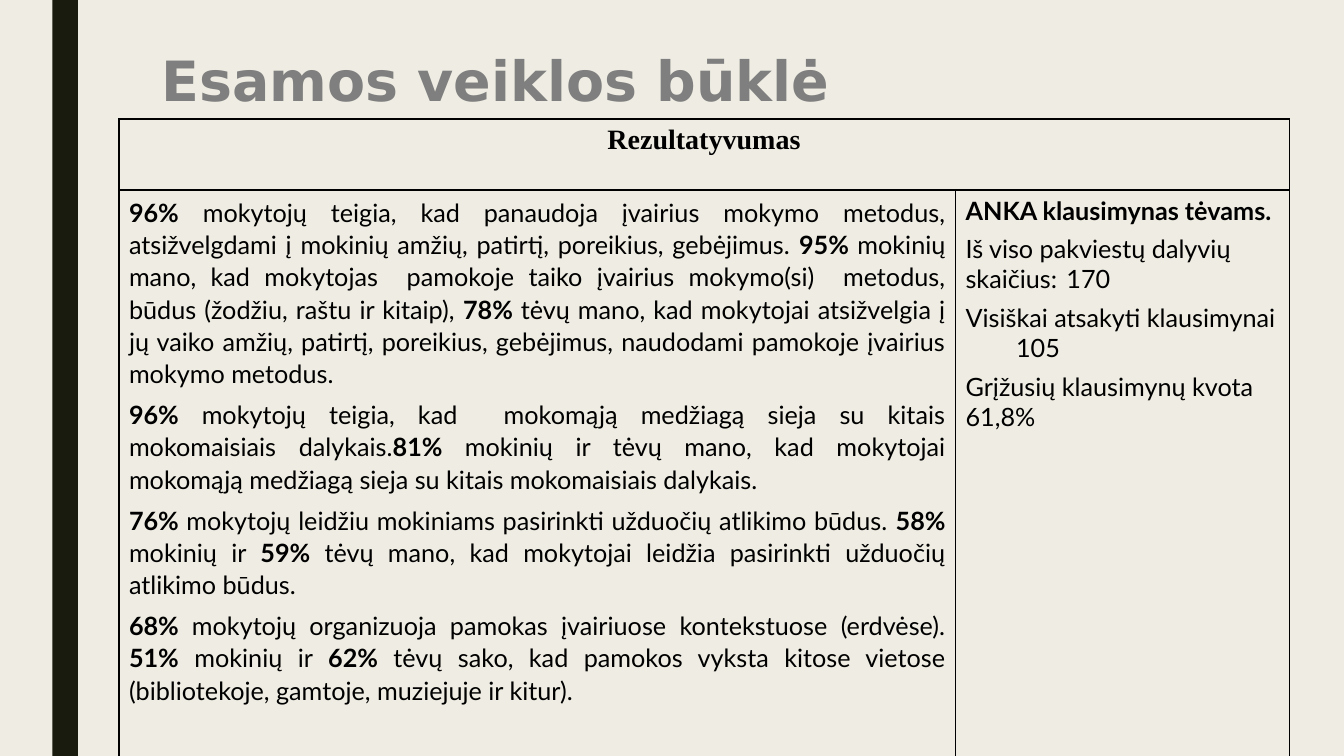
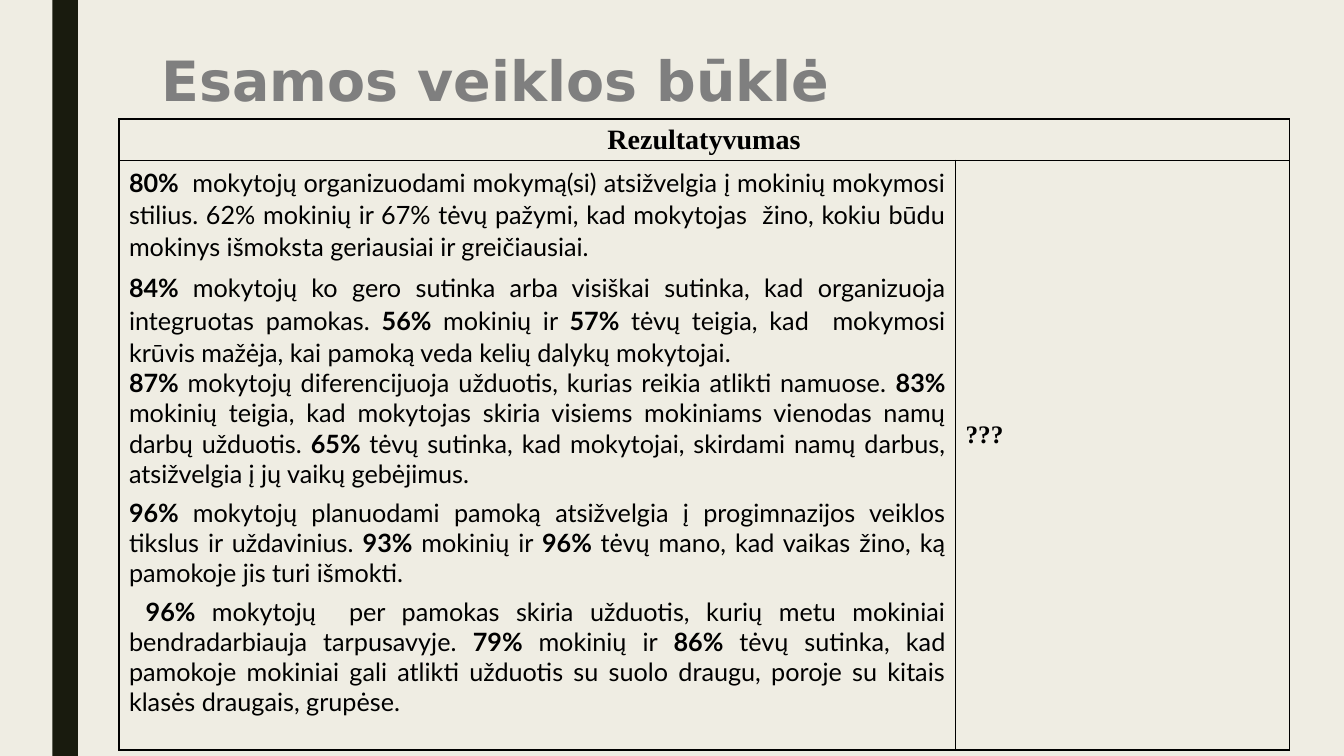
from lxml import etree
from pptx import Presentation
from pptx.dml.color import RGBColor
from pptx.enum.shapes import MSO_SHAPE
from pptx.enum.text import MSO_ANCHOR, PP_ALIGN
from pptx.oxml.ns import qn
from pptx.util import Inches, Pt

CREAM = RGBColor(0xEF, 0xED, 0xE3)
DARK = RGBColor(0x19, 0x1B, 0x0E)
GREY = RGBColor(0x7F, 0x7F, 0x7F)
BLACK = RGBColor(0, 0, 0)

RECT = MSO_SHAPE.RECTANGLE
TOP, MIDDLE = MSO_ANCHOR.TOP, MSO_ANCHOR.MIDDLE
LEFT, CENTER, JUSTIFY = PP_ALIGN.LEFT, PP_ALIGN.CENTER, PP_ALIGN.JUSTIFY

TITLE_FONT = {"name": "DejaVu Sans", "size": Pt(39.6), "bold": True}
HEAD_FONT = {"name": "Times New Roman", "size": Pt(20)}
BODY_FONT = {"name": "Lato", "size": Pt(18)}
MARK_FONT = {"name": "Times New Roman", "size": Pt(18)}

HEAD = {"alignment": CENTER}
SIDE = {"alignment": LEFT, "space_before": Pt(6)}
TIGHT = {"alignment": JUSTIFY}
BODY = {"alignment": JUSTIFY, "space_before": Pt(6)}
LOOSE = {**BODY, "line_spacing": 1.07}
FIRST = {**TIGHT, "line_spacing": 1.07}

COLUMNS = (62.25, 24.83)
TITLE = "Esamos veiklos būklė"
HEADING = [("**Rezultatyvumas**", HEAD)]

METHODS = [
    ("**96%** mokytojų teigia, kad panaudoja įvairius mokymo metodus, "
     "atsižvelgdami į mokinių amžių, patirtį, poreikius, gebėjimus. "
     "**95% **mokinių mano, kad mokytojas  pamokoje taiko įvairius "
     "mokymo(si)  metodus, būdus (žodžiu, raštu ir kitaip), **78% **tėvų "
     "mano, kad mokytojai atsižvelgia į jų vaiko amžių, patirtį, poreikius, "
     "gebėjimus, naudodami pamokoje įvairius mokymo metodus.", FIRST),
    ("**96% **mokytojų teigia, kad  mokomąją medžiagą sieja su kitais "
     "mokomaisiais dalykais.**81% **mokinių ir tėvų mano, kad mokytojai "
     "mokomąją medžiagą sieja su kitais mokomaisiais dalykais.", LOOSE),
    ("**76% **mokytojų leidžiu mokiniams pasirinkti užduočių atlikimo būdus. "
     "**58% **mokinių ir **59%** tėvų mano, kad mokytojai leidžia pasirinkti "
     "užduočių atlikimo būdus.", LOOSE),
    ("**68% **mokytojų organizuoja pamokas įvairiuose kontekstuose "
     "(erdvėse). **51%** mokinių ir **62%** tėvų sako, kad pamokos vyksta "
     "kitose vietose (bibliotekoje, gamtoje, muziejuje ir kitur).", LOOSE),
]
SURVEY = [
    ("**ANKA klausimynas tėvams.**", SIDE),
    ("Iš viso pakviestų dalyvių skaičius: \t170", SIDE),
    ("Visiškai atsakyti klausimynai \t105", SIDE),
    ("Grįžusių klausimynų kvota \t61,8%", SIDE),
]
LEARNING = [
    ("**80%  **mokytojų organizuodami mokymą(si) atsižvelgia į mokinių "
     "mokymosi stilius. 62% mokinių ir 67% tėvų pažymi, kad mokytojas  žino, "
     "kokiu būdu mokinys išmoksta geriausiai ir greičiausiai.", FIRST),
    ("**84% **mokytojų ko gero sutinka arba visiškai sutinka, kad organizuoja "
     "integruotas pamokas. **56% **mokinių ir **57% **tėvų teigia, kad  "
     "mokymosi krūvis mažėja, kai pamoką veda kelių dalykų mokytojai.", LOOSE),
    ("**87% **mokytojų diferencijuoja užduotis, kurias reikia atlikti namuose. "
     "**83% **mokinių teigia, kad mokytojas skiria visiems mokiniams vienodas "
     "namų darbų užduotis. **65% **tėvų sutinka, kad mokytojai, skirdami namų "
     "darbus, atsižvelgia į jų vaikų gebėjimus.", TIGHT),
    ("**96% **mokytojų planuodami pamoką atsižvelgia į progimnazijos veiklos "
     "tikslus ir uždavinius. **93% **mokinių ir **96% **tėvų mano, kad vaikas "
     "žino, ką pamokoje jis turi išmokti.", BODY),
    (" **96% **mokytojų  per pamokas skiria užduotis, kurių metu mokiniai "
     "bendradarbiauja tarpusavyje. **79% **mokinių ir** 86% **tėvų sutinka, "
     "kad pamokoje mokiniai gali atlikti užduotis su suolo draugu, poroje su "
     "kitais klasės draugais, grupėse.", BODY),
]
QUESTION = [("**???**", TIGHT)]


def apply(target, values):
    for name, value in values.items():
        setattr(target, name, value)


class Deck:
    def __init__(self):
        self.prs = Presentation()
        self.prs.slide_width = Inches(13.33)
        self.prs.slide_height = Inches(7.5)
        fill = self.prs.slide_master.background.fill
        fill.solid()
        fill.fore_color.rgb = CREAM

    def x(self, cols):
        return int(self.prs.slide_width * cols / 100)

    def y(self, rows):
        return int(self.prs.slide_height * rows / 100)

    def box(self, left, top, width, height):
        return self.x(left), self.y(top), self.x(width), self.y(height)

    def slide(self, title):
        self.s = self.prs.slides.add_slide(self.prs.slide_layouts[5])
        self.band()
        self.title(title)

    def band(self):
        sp = self.s.shapes.add_shape(RECT, *self.box(3.9, 0, 1.9, 100))
        sp.shadow.inherit = False
        sp.fill.solid()
        sp.fill.fore_color.rgb = DARK
        sp.line.fill.background()

    def title(self, text):
        sp = self.s.shapes.title
        places = ("left", "top", "width", "height")
        apply(sp, dict(zip(places, self.box(11.25, 6.5, 78.75, 10.5))))
        tf = sp.text_frame
        apply(tf, {"vertical_anchor": TOP, "word_wrap": True,
                   "margin_top": Inches(0.05)})
        p = tf.paragraphs[0]
        apply(p, {"alignment": LEFT, "line_spacing": 0.89})
        self.run(p, text, TITLE_FONT, GREY)

    def run(self, p, text, font, color=BLACK):
        r = p.add_run()
        r.text = text
        apply(r.font, font)
        r.font.color.rgb = color

    def cell(self, cell, paragraphs, font):
        tf = cell.text_frame
        for i, (text, style) in enumerate(paragraphs):
            p = tf.add_paragraph() if i else tf.paragraphs[0]
            apply(p, style)
            for j, part in enumerate(text.split("**")):
                if part:
                    self.run(p, part, {**font, "bold": j % 2 == 1})

    def border(self, cell):
        tcPr = cell._tc.get_or_add_tcPr()
        for side in ("a:lnL", "a:lnR", "a:lnT", "a:lnB"):
            ln = etree.SubElement(tcPr, qn(side), w=str(Pt(1)))
            fill = etree.SubElement(ln, qn("a:solidFill"))
            etree.SubElement(fill, qn("a:srgbClr"), val=str(BLACK))
        cell.fill.background()

    def table(self, heights, body, side, side_font=BODY_FONT):
        place = self.box(8.85, 15.75, sum(COLUMNS), sum(heights))
        table = self.s.shapes.add_table(2, 2, *place).table
        apply(table, {"first_row": False, "horz_banding": False})
        for column, width in zip(table.columns, COLUMNS):
            column.width = self.x(width)
        for row, height in zip(table.rows, heights):
            row.height = self.y(height)
        for cell in table.iter_cells():
            self.border(cell)
        head = table.cell(0, 0)
        head.merge(table.cell(0, 1))
        self.cell(head, HEADING, HEAD_FONT)
        self.cell(table.cell(1, 0), body, BODY_FONT)
        self.cell(table.cell(1, 1), side, side_font)
        return table


def main():
    deck = Deck()
    deck.slide(TITLE)
    deck.table((9.4, 76), METHODS, SURVEY)
    deck.slide(TITLE)
    table = deck.table((5.4, 78), LEARNING, QUESTION, MARK_FONT)
    apply(table.cell(1, 1), {"vertical_anchor": MIDDLE,
                             "margin_bottom": Inches(0.45)})
    deck.prs.save("out.pptx")


if __name__ == "__main__":
    main()
